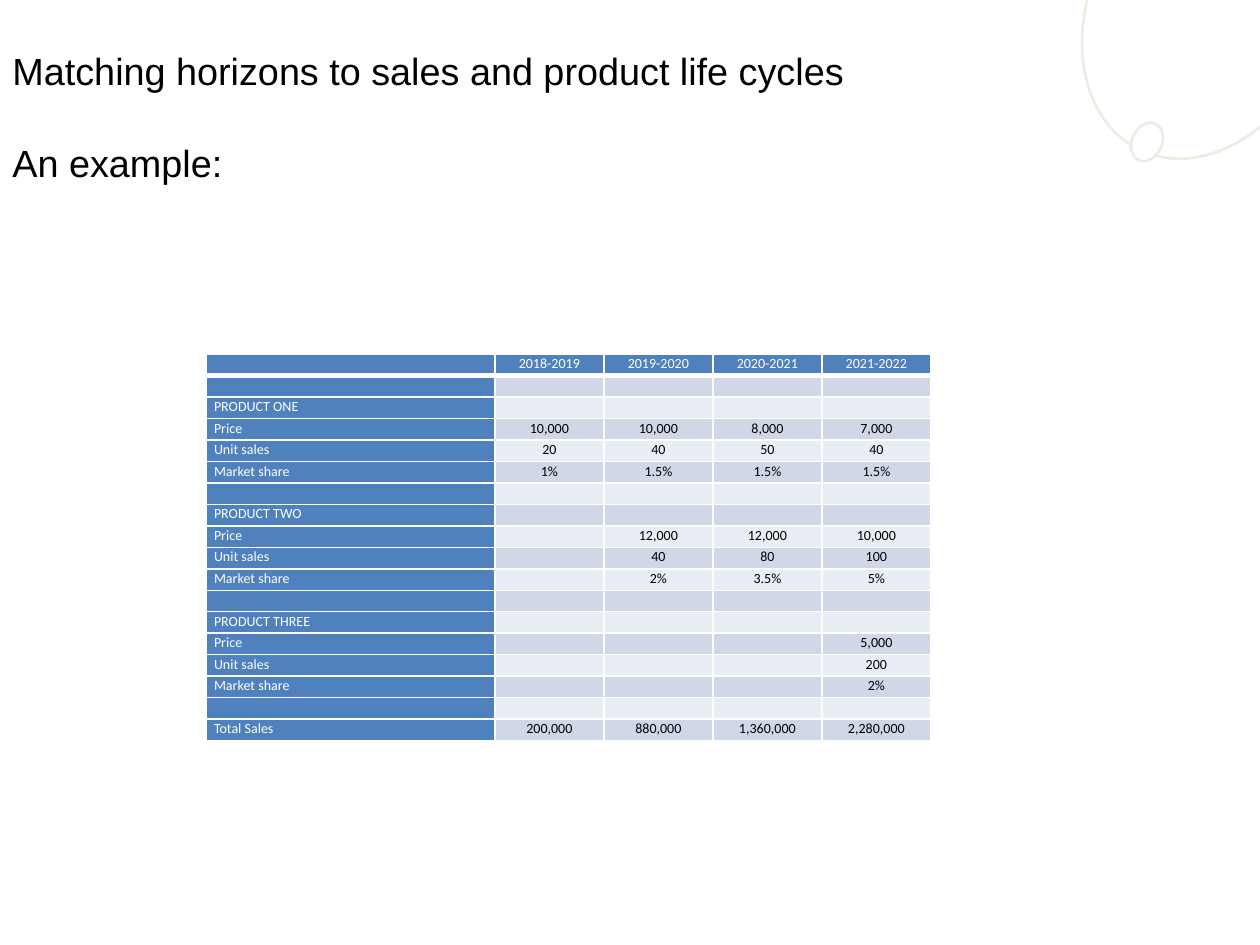
import dataclasses

import lxml.etree
import pptx
import pptx.dml.color
import pptx.enum.shapes
import pptx.enum.text
import pptx.oxml.ns
import pptx.util

EMU_PER_PX = 914400 / 126
WHITE, BLACK, BLUE, CREAM = "FFFFFF", "000000", "4F81BD", "EEECE1"
BANDS = ("D0D8E8", "E9EDF4")
CENTER = pptx.enum.text.PP_ALIGN.CENTER
LEFT = pptx.enum.text.PP_ALIGN.LEFT


@dataclasses.dataclass
class Ring:
    left: int
    top: int
    width: int
    height: int
    filled: bool


@dataclasses.dataclass
class Product:
    name: str
    price: tuple
    units: tuple
    share: tuple


RINGS = [
    Ring(1090, -145, 233, 310, False),
    Ring(1132, 122, 30, 40, True),
]
YEARS = ("2018-2019", "2019-2020", "2020-2021", "2021-2022")
PRODUCTS = [
    Product("PRODUCT ONE", ("10,000", "10,000", "8,000", "7,000"),
            ("20", "40", "50", "40"), ("1%", "1.5%", "1.5%", "1.5%")),
    Product("PRODUCT TWO", ("12,000", "12,000", "10,000"),
            ("40", "80", "100"), ("2%", "3.5%", "5%")),
    Product("PRODUCT THREE", ("5,000",), ("200",), ("2%",)),
]
TOTALS = ("200,000", "880,000", "1,360,000", "2,280,000")
COLUMN_WIDTHS = (289, 109, 109, 109, 109)
TABLE_LEFT, TABLE_TOP, TABLE_HEIGHT = 206, 354, 387


def px(length: int) -> int:
    return round(length * EMU_PER_PX)


def color(value: str) -> pptx.dml.color.RGBColor:
    return pptx.dml.color.RGBColor.from_string(value)


def apply(target, values: dict) -> None:
    for name, value in values.items():
        setattr(target, name, value)


def draw_ring(page, ring: Ring) -> None:
    shape = page.shapes.add_shape(
        pptx.enum.shapes.MSO_SHAPE.OVAL,
        px(ring.left), px(ring.top), px(ring.width), px(ring.height))
    shape.rotation = 25.4
    shape.shadow.inherit = False
    if ring.filled:
        shape.fill.solid()
        shape.fill.fore_color.rgb = color(WHITE)
    else:
        shape.fill.background()
    shape.line.color.rgb = color(CREAM)
    shape.line.width = pptx.util.Pt(1.5)


def write(para, text: str, size: float, font: str, ink: str) -> None:
    span = para.add_run()
    span.text = text
    apply(span.font, {"size": pptx.util.Pt(size), "name": font})
    span.font.color.rgb = color(ink)


def draw_title(page) -> None:
    box = page.shapes.add_textbox(0, px(38), px(1026), px(157))
    frame = box.text_frame
    apply(frame, {"word_wrap": True,
                  "vertical_anchor": pptx.enum.text.MSO_ANCHOR.MIDDLE})
    write(frame.paragraphs[0], "Matching horizons to sales and product life cycles",
          21.6, "Arial", BLACK)
    example = frame.add_paragraph()
    example.space_before = pptx.util.Pt(27)
    write(example, "An example:", 21.6, "Arial", BLACK)


def set_borders(cell, bottom: int) -> None:
    properties = cell._tc.get_or_add_tcPr()
    qn = pptx.oxml.ns.qn
    widths = {"a:lnL": 1, "a:lnR": 1, "a:lnT": 1, "a:lnB": bottom}
    for position, (tag, width) in enumerate(widths.items()):
        line = lxml.etree.Element(qn(tag), w=str(pptx.util.Pt(width)))
        fill = lxml.etree.SubElement(line, qn("a:solidFill"))
        lxml.etree.SubElement(fill, qn("a:srgbClr"), val=WHITE)
        properties.insert(position, line)


def fill_cell(cell, text: str, row: int, column: int) -> None:
    heading = row == 0 or column == 0
    cell.fill.solid()
    cell.fill.fore_color.rgb = color(BLUE if heading else BANDS[(row - 1) % 2])
    set_borders(cell, 3 if row == 0 else 1)
    apply(cell, {"margin_left": px(8), "margin_right": px(8),
                 "margin_top": 0, "margin_bottom": 0})
    para = cell.text_frame.paragraphs[0]
    apply(para, {"alignment": CENTER if column else LEFT, "line_spacing": 1.07})
    if text:
        write(para, text, 8, "Calibri", WHITE if heading else BLACK)
    else:
        lxml.etree.SubElement(
            para._p, pptx.oxml.ns.qn("a:endParaRPr"), sz="800")


def table_rows() -> list:
    rows = [("", YEARS), ("", ())]
    for product in PRODUCTS:
        rows += [(product.name, ()), ("Price", product.price),
                 ("Unit sales", product.units),
                 ("Market share", product.share), ("", ())]
    rows.append(("Total Sales", TOTALS))
    return [(label,) + ("",) * (len(YEARS) - len(values)) + values
            for label, values in rows]


def draw_table(page) -> None:
    rows = table_rows()
    table = page.shapes.add_table(
        len(rows), len(COLUMN_WIDTHS), px(TABLE_LEFT), px(TABLE_TOP),
        px(sum(COLUMN_WIDTHS)), px(TABLE_HEIGHT)).table
    apply(table, {"first_row": True, "first_col": True, "horz_banding": True})
    for column, width in zip(table.columns, COLUMN_WIDTHS):
        column.width = px(width)
    for row, texts in enumerate(rows):
        table.rows[row].height = px(TABLE_HEIGHT) // len(rows)
        for column, text in enumerate(texts):
            fill_cell(table.cell(row, column), text, row, column)


def main() -> None:
    deck = pptx.Presentation()
    apply(deck, {"slide_width": px(1260), "slide_height": px(945)})
    page = deck.slides.add_slide(deck.slide_layouts[6])
    for ring in RINGS:
        draw_ring(page, ring)
    draw_title(page)
    draw_table(page)
    deck.save("out.pptx")


if __name__ == "__main__":
    main()
